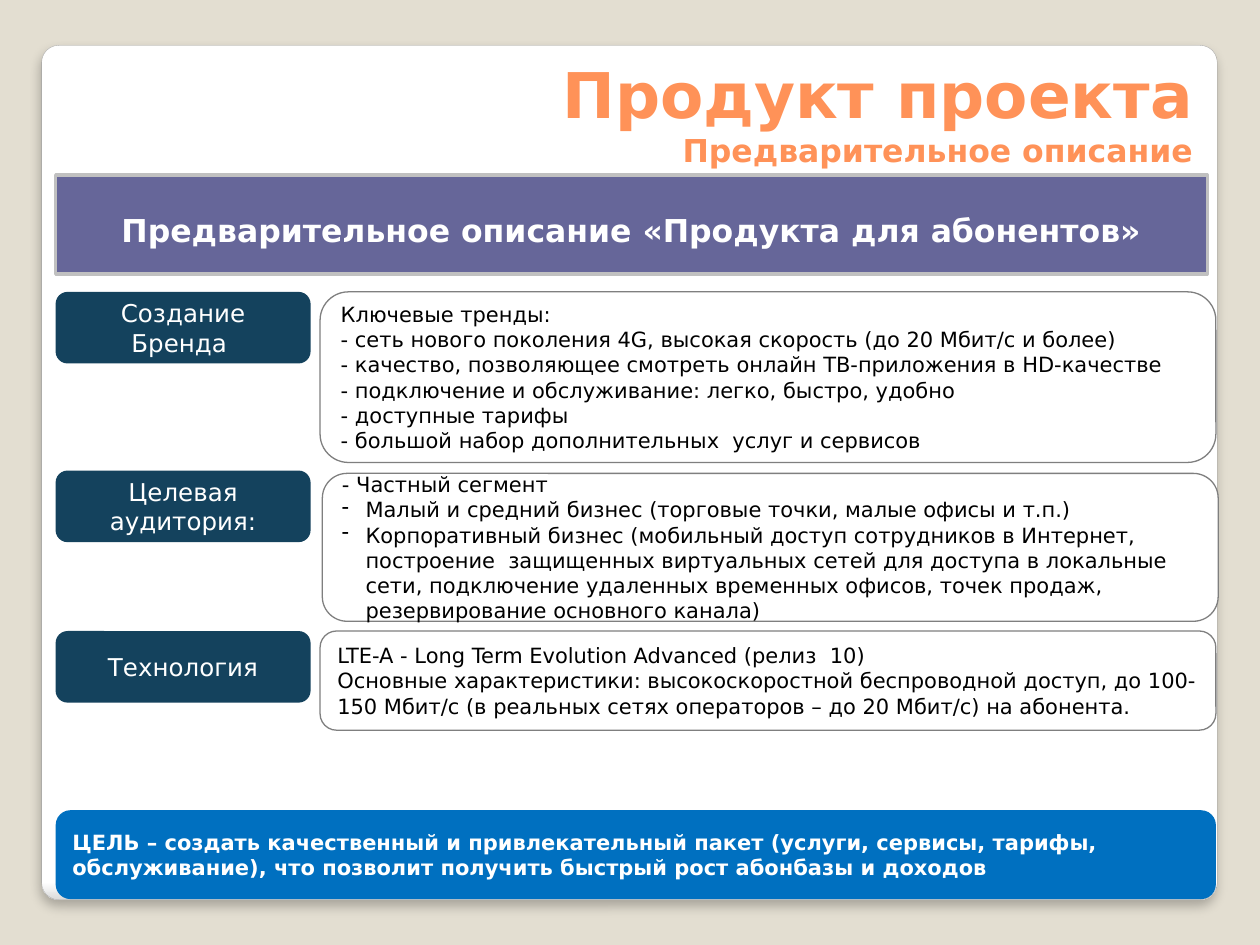
"""Build the slide that describes the product of the project."""
from lxml.etree import SubElement
from pptx import Presentation
from pptx.dml.color import RGBColor
from pptx.enum.shapes import MSO_SHAPE
from pptx.enum.text import MSO_ANCHOR, MSO_AUTO_SIZE, PP_ALIGN
from pptx.oxml import parse_xml
from pptx.oxml.ns import nsdecls, qn
from pptx.util import Pt

FONT = "DejaVu Sans"
BEIGE = RGBColor(0xE3, 0xDE, 0xD1)
WHITE = RGBColor(0xFF, 0xFF, 0xFF)
BLACK = RGBColor(0, 0, 0)
ORANGE = RGBColor(0xFF, 0x92, 0x58)
VIOLET = RGBColor(0x66, 0x66, 0x99)
SILVER = RGBColor(0xC0, 0xC0, 0xC0)
NAVY = RGBColor(0x14, 0x42, 0x5D)
BLUE = RGBColor(0x00, 0x70, 0xC0)
GRAY = RGBColor(0x7F, 0x7F, 0x7F)
EDGE = RGBColor(0xA4, 0xA4, 0xA4)
PALE = RGBColor(0xDA, 0xDA, 0xDA)

TITLE = [("Продукт проекта", 36), ("Предварительное описание", 18)]
BANNER = "Предварительное описание «Продукта для абонентов»"
GOAL = (
    "ЦЕЛЬ – создать качественный и привлекательный пакет (услуги, сервисы, тарифы, "
    "обслуживание), что позволит получить быстрый рост абонбазы и доходов"
)
SECTIONS = [
    {
        "label": "Создание Бренда ",
        "label_top": 166.8,
        "box": (182.9, 166.8, 511.9, 97.5),
        "lines": [
            "Ключевые тренды:",
            "- сеть нового поколения 4G, высокая скорость (до 20 Мбит/с и более)",
            "- качество, позволяющее смотреть онлайн ТВ-приложения в HD-качестве",
            "- подключение и обслуживание: легко, быстро, удобно",
            "- доступные тарифы",
            "- большой набор дополнительных  услуг и сервисов",
        ],
        "bullets": [],
    },
    {
        "label": "Целевая аудитория:",
        "label_top": 268.9,
        "box": (184.2, 270.5, 511.9, 84.5),
        "lines": ["- Частный сегмент"],
        "bullets": [
            "Малый и средний бизнес (торговые точки, малые офисы и т.п.)",
            "Корпоративный бизнес (мобильный доступ сотрудников в Интернет, "
            "построение  защищенных виртуальных сетей для доступа в локальные сети, "
            "подключение удаленных временных офисов, точек продаж, "
            "резервирование основного канала)",
        ],
    },
    {
        "label": "Технология",
        "label_top": 360.6,
        "box": (182.9, 360.6, 511.9, 56.7),
        "lines": [
            "LTE-A - Long Term Evolution Advanced (релиз  10)",
            "Основные характеристики: высокоскоростной беспроводной доступ, "
            "до 100-150 Мбит/с (в реальных сетях операторов – до 20 Мбит/с) на абонента.",
        ],
        "bullets": [],
    },
]
LEFT = 31.8
LABEL_WIDTH, LABEL_HEIGHT = 145.7, 40.9
BULLET_INDENT = 13.5


def add_box(slide, kind, box, fill=None, line=None, line_width=0.75):
    shape = slide.shapes.add_shape(kind, *(Pt(length) for length in box))
    shape.shadow.inherit = False
    if fill is not None:
        shape.fill.solid()
        shape.fill.fore_color.rgb = fill
    if line is None:
        shape.line.fill.background()
    else:
        shape.line.color.rgb = line
        shape.line.width = Pt(line_width)
    return shape


def write(shape, texts, size, color, bold=False, align=PP_ALIGN.LEFT, bullets=()):
    frame = shape.text_frame
    frame.word_wrap = True
    frame.vertical_anchor = MSO_ANCHOR.MIDDLE
    frame.text = "\n".join([*texts, *bullets])
    font_format = {"name": FONT, "size": Pt(size), "bold": bold}
    for index, paragraph in enumerate(frame.paragraphs):
        paragraph.alignment = align
        font = paragraph.runs[0].font
        for name, value in font_format.items():
            setattr(font, name, value)
        font.color.rgb = color
        if index >= len(texts):
            properties = paragraph._p.get_or_add_pPr()
            properties.set("marL", str(Pt(BULLET_INDENT)))
            properties.set("indent", str(-Pt(BULLET_INDENT)))
            SubElement(properties, qn("a:buChar"), char="-")


def add_panel(slide):
    panel = add_box(slide, MSO_SHAPE.ROUNDED_RECTANGLE, (23.8, 25.9, 671.8, 488.2), None, EDGE, 0.16)
    panel.adjustments[0] = 0.02
    panel.fill.gradient()
    panel.fill.gradient_angle = 270
    for stop, (position, color) in zip(panel.fill.gradient_stops, [(0.98, WHITE), (1, PALE)]):
        stop.position = position
        stop.color.rgb = color
    shadow = parse_xml(
        f'<a:outerShdw {nsdecls("a")} blurRad="{Pt(6)}" dist="{Pt(4)}" dir="5400000">'
        '<a:srgbClr val="000000"><a:alpha val="25000"/></a:srgbClr></a:outerShdw>'
    )
    panel.element.spPr.find(qn("a:effectLst")).append(shadow)
    return panel


def add_title(slide):
    title = slide.shapes.title
    position = {"left": 224.6, "top": 28.1, "width": 464.4, "height": 72}
    for name, value in position.items():
        setattr(title, name, Pt(value))
    write(title, [text for text, _ in TITLE], 18, ORANGE, True, PP_ALIGN.RIGHT)
    title.text_frame.auto_size = MSO_AUTO_SIZE.NONE
    title.text_frame.vertical_anchor = MSO_ANCHOR.BOTTOM
    for paragraph, (_, size) in zip(title.text_frame.paragraphs, TITLE):
        paragraph.runs[0].font.size = Pt(size)
    return title


def main():
    presentation = Presentation()
    presentation.slide_width, presentation.slide_height = Pt(720), Pt(540)
    slide = presentation.slides.add_slide(presentation.slide_layouts[5])
    slide.background.fill.solid()
    slide.background.fill.fore_color.rgb = BEIGE

    title = add_title(slide)
    title.element.addprevious(add_panel(slide).element)

    banner = add_box(slide, MSO_SHAPE.RECTANGLE, (LEFT, 100, 658, 56.6), VIOLET, SILVER, 1.75)
    write(banner, [BANNER], 18, WHITE, True, PP_ALIGN.CENTER)
    banner.text_frame.paragraphs[0].line_spacing = 1.3

    for section in SECTIONS:
        label_box = (LEFT, section["label_top"], LABEL_WIDTH, LABEL_HEIGHT)
        label = add_box(slide, MSO_SHAPE.ROUNDED_RECTANGLE, label_box, NAVY)
        write(label, [section["label"]], 14, WHITE, align=PP_ALIGN.CENTER)
        details = add_box(slide, MSO_SHAPE.ROUNDED_RECTANGLE, section["box"], WHITE, GRAY)
        write(details, section["lines"], 12, BLACK, bullets=section["bullets"])

    goal = add_box(slide, MSO_SHAPE.ROUNDED_RECTANGLE, (LEFT, 463, 663, 50.8), BLUE)
    write(goal, [GOAL], 12, WHITE, True)
    presentation.save("out.pptx")


if __name__ == "__main__":
    main()
